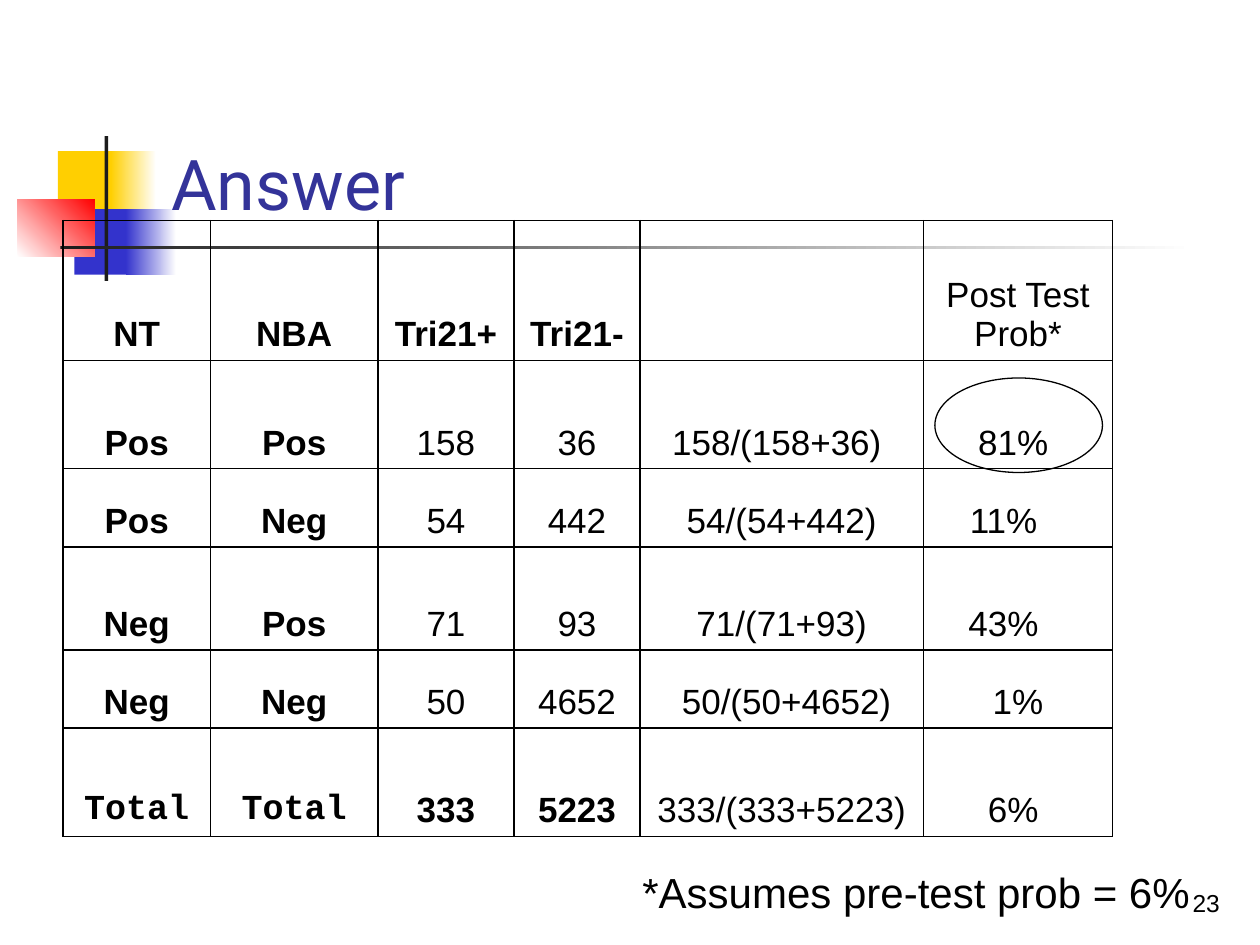
from lxml.etree import SubElement
from pptx import Presentation
from pptx.dml.color import RGBColor
from pptx.enum.shapes import MSO_SHAPE as Preset
from pptx.enum.text import MSO_ANCHOR as Anchor, MSO_AUTO_SIZE as AutoSize, PP_ALIGN as Align
from pptx.oxml.ns import qn
from pptx.util import Inches, Pt

COLORS = {
    "ink": "000000",
    "title": "333399",
    "yellow": "FFCF01",
    "blue": "3333CC",
    "red": "FF0000",
    "bar": "1C1C1C",
    "white": "FFFFFF",
}
SOLID_BLOCKS = [
    ((0.46, 1.2, 0.48, 0.52), "yellow"),
    ((0.59, 1.66, 0.46, 0.52), "blue"),
    ((0.83, 1.08, 0.03, 1.15), "bar"),
]
FADING_BLOCKS = [
    ((0.88, 1.2, 0.36, 0.52), "yellow", "white", 0),
    ((1, 1.66, 0.4, 0.52), "blue", "white", 0),
    ((0.14, 1.58, 0.61, 0.46), "white", "red", 45),
    ((0.48, 1.95, 9, 0.03), "bar", "white", 0),
]
COLUMN_WIDTHS = [1.17, 1.33, 1.08, 1, 2.25, 1.5]
ROW_HEIGHTS = [1.11, 0.86, 0.62, 0.82, 0.62, 0.86]
RESULTS = [
    ["NT", "NBA", "Tri21+", "Tri21-", "", "Post Test Prob*"],
    ["Pos", "Pos", "158", "36", "158/(158+36) ", "81% "],
    ["Pos", "Neg", "54", "442", "54/(54+442)", "11%"],
    ["Neg", "Pos", "71", "93", "71/(71+93)", "43%"],
    ["Neg", "Neg", "50", "4652", " 50/(50+4652)", "1%"],
    ["Total", "Total", "333", "5223", "333/(333+5223)", "6%\u00a0"],
]
SHIFTED_LEFT = {"11%", "43%"}


def rgb(name):
    return RGBColor.from_string(COLORS[name])


def box(left, top, width, height):
    return Inches(left), Inches(top), Inches(width), Inches(height)


def add_run(paragraph, text, size, font="Arial", color="ink", bold=False):
    run = paragraph.add_run()
    run.text = text
    run.font.size = Pt(size)
    run.font.name = font
    run.font.bold = bold
    run.font.color.rgb = rgb(color)


def add_block(slide, place):
    block = slide.shapes.add_shape(Preset.RECTANGLE, *box(*place))
    block.shadow.inherit = False
    block.line.fill.background()
    slide.shapes.title.element.addprevious(block.element)
    return block


def add_solid_block(slide, place, color):
    block = add_block(slide, place)
    block.fill.solid()
    block.fill.fore_color.rgb = rgb(color)


def add_fading_block(slide, place, start, end, angle):
    fill = add_block(slide, place).fill
    fill.gradient()
    fill.gradient_angle = angle
    for stop, position, color in zip(fill.gradient_stops, (0, 1), (start, end)):
        stop.position = position
        stop.color.rgb = rgb(color)


def set_title(slide, text):
    title = slide.shapes.title
    title.left, title.top, title.width, title.height = box(1.26, 0.23, 8.52, 1.6)
    title.text_frame.vertical_anchor = Anchor.BOTTOM
    heading = title.text_frame.paragraphs[0]
    heading.alignment = Align.LEFT
    add_run(heading, text, 40, "Roboto", "title")


def add_borders(cell):
    properties = cell._tc.get_or_add_tcPr()
    for side in ("lnL", "lnR", "lnT", "lnB"):
        border = SubElement(properties, qn(f"a:{side}"), w=str(Pt(1)))
        fill = SubElement(border, qn("a:solidFill"))
        SubElement(fill, qn("a:srgbClr"), val=COLORS["ink"])


def fill_cell(cell, text, bold):
    add_borders(cell)
    cell.fill.background()
    cell.vertical_anchor = Anchor.BOTTOM
    if text in SHIFTED_LEFT:
        cell.margin_right = Inches(0.33)
    paragraph = cell.text_frame.paragraphs[0]
    paragraph.alignment = Align.CENTER
    if text:
        font = "Courier New" if text == "Total" else "Arial"
        add_run(paragraph, text, 20, font, bold=bold)


def add_results_table(slide):
    place = box(0.5, 1.75, sum(COLUMN_WIDTHS), sum(ROW_HEIGHTS))
    table = slide.shapes.add_table(len(ROW_HEIGHTS), len(COLUMN_WIDTHS), *place).table
    table.first_row = table.horz_banding = False
    for column, width in zip(table.columns, COLUMN_WIDTHS):
        column.width = Inches(width)
    for row, height in zip(table.rows, ROW_HEIGHTS):
        row.height = Inches(height)
    last_row = len(RESULTS) - 1
    for r, values in enumerate(RESULTS):
        for c, text in enumerate(values):
            bold = c < 2 or (c < 4 and r in (0, last_row))
            fill_cell(table.cell(r, c), text, bold)


def add_text(slide, place, text, size, align=Align.LEFT, anchor=Anchor.TOP, wrap=True):
    frame = slide.shapes.add_textbox(*box(*place)).text_frame
    frame.word_wrap = wrap
    frame.vertical_anchor = anchor
    if not wrap:
        frame.auto_size = AutoSize.SHAPE_TO_FIT_TEXT
    frame.paragraphs[0].alignment = align
    add_run(frame.paragraphs[0], text, size)


def add_highlight(slide, place):
    ring = slide.shapes.add_shape(Preset.OVAL, *box(*place))
    ring.shadow.inherit = False
    ring.fill.background()
    ring.line.color.rgb = rgb("ink")
    ring.line.width = Pt(0.75)


def main():
    deck = Presentation()
    deck.slide_width, deck.slide_height = Inches(10), Inches(7.5)
    slide = deck.slides.add_slide(deck.slide_layouts[5])
    solid_yellow, solid_blue, upright_bar = SOLID_BLOCKS
    fading_yellow, fading_blue, fading_red, level_bar = FADING_BLOCKS
    add_solid_block(slide, *solid_yellow)
    add_fading_block(slide, *fading_yellow)
    add_solid_block(slide, *solid_blue)
    add_fading_block(slide, *fading_blue)
    add_fading_block(slide, *fading_red)
    add_solid_block(slide, *upright_bar)
    add_fading_block(slide, *level_bar)
    set_title(slide, "Answer")
    add_results_table(slide)
    add_text(slide, (5, 6.83, 4.55, 0.5), "*Assumes pre-test prob = 6%", 24, wrap=False)
    add_highlight(slide, (7.42, 3, 1.33, 0.75))
    add_text(slide, (7.7, 6.83, 2.08, 0.5), "23", 14, Align.RIGHT, Anchor.BOTTOM)
    deck.save("out.pptx")


if __name__ == "__main__":
    main()
